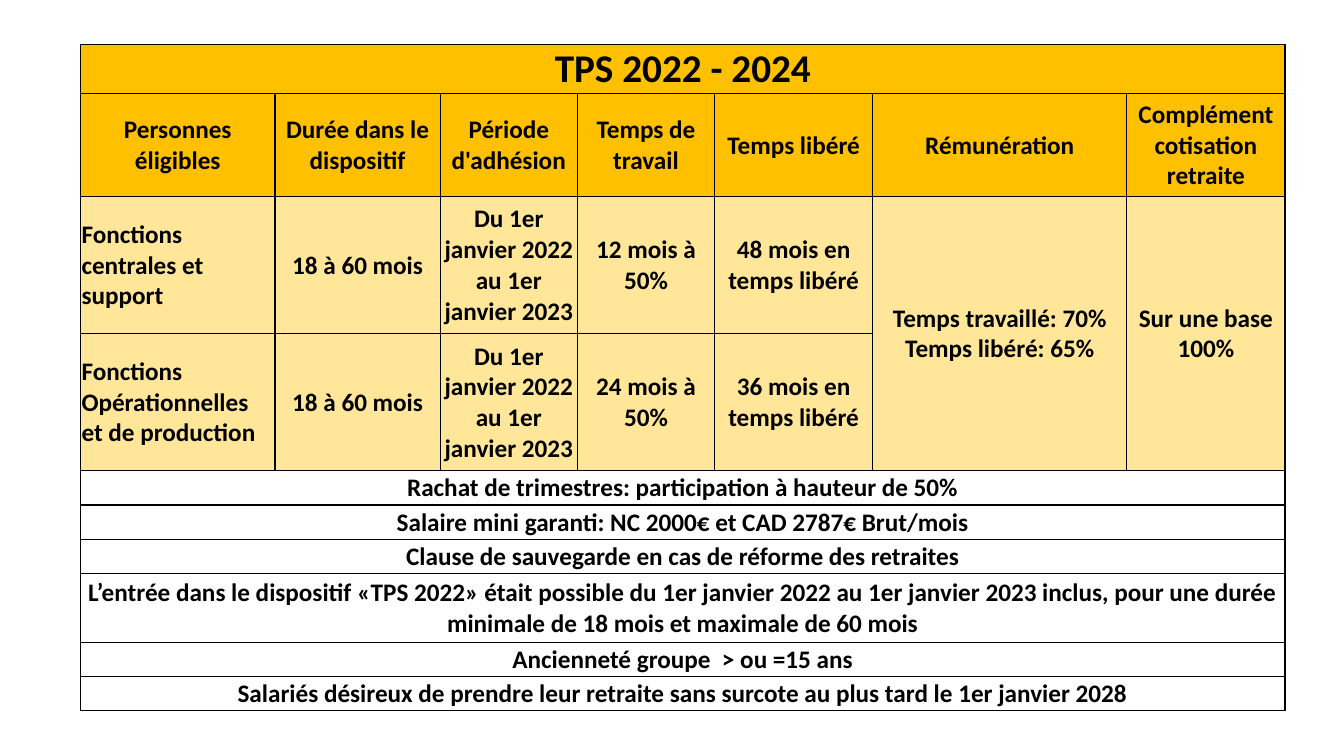
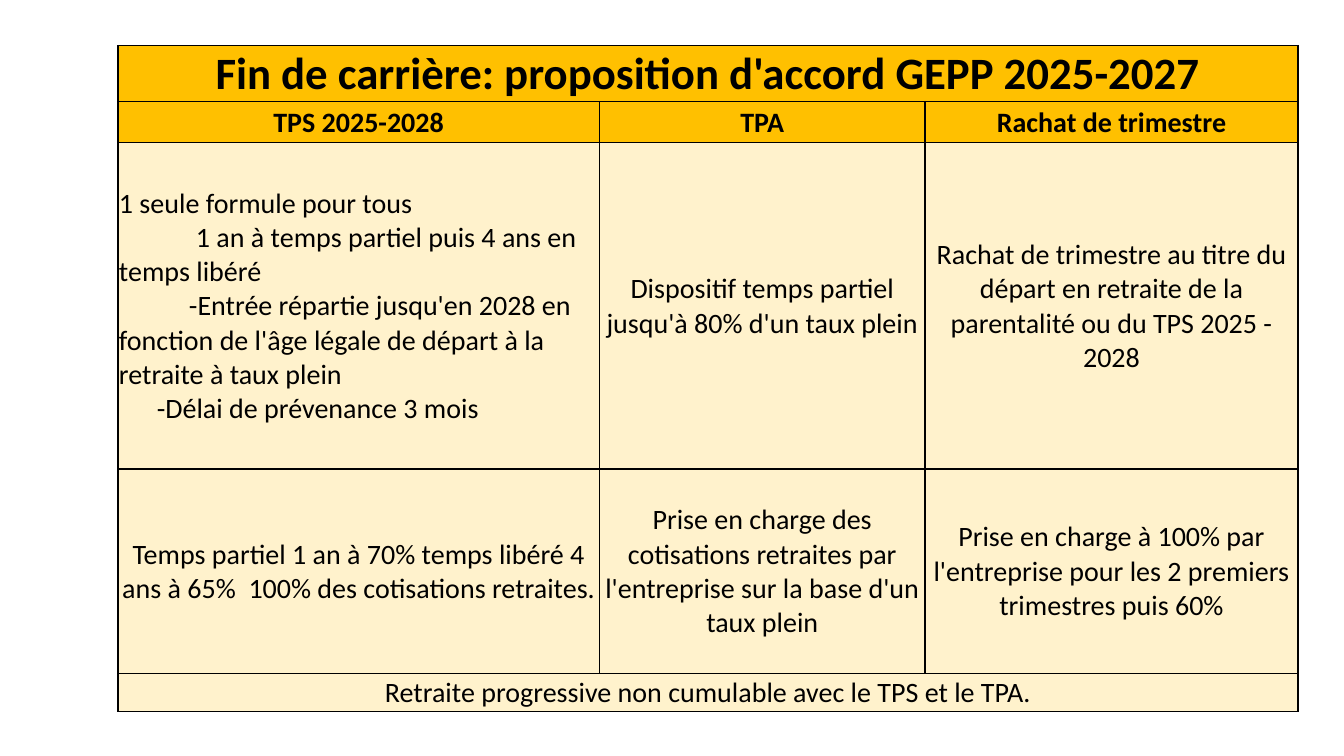
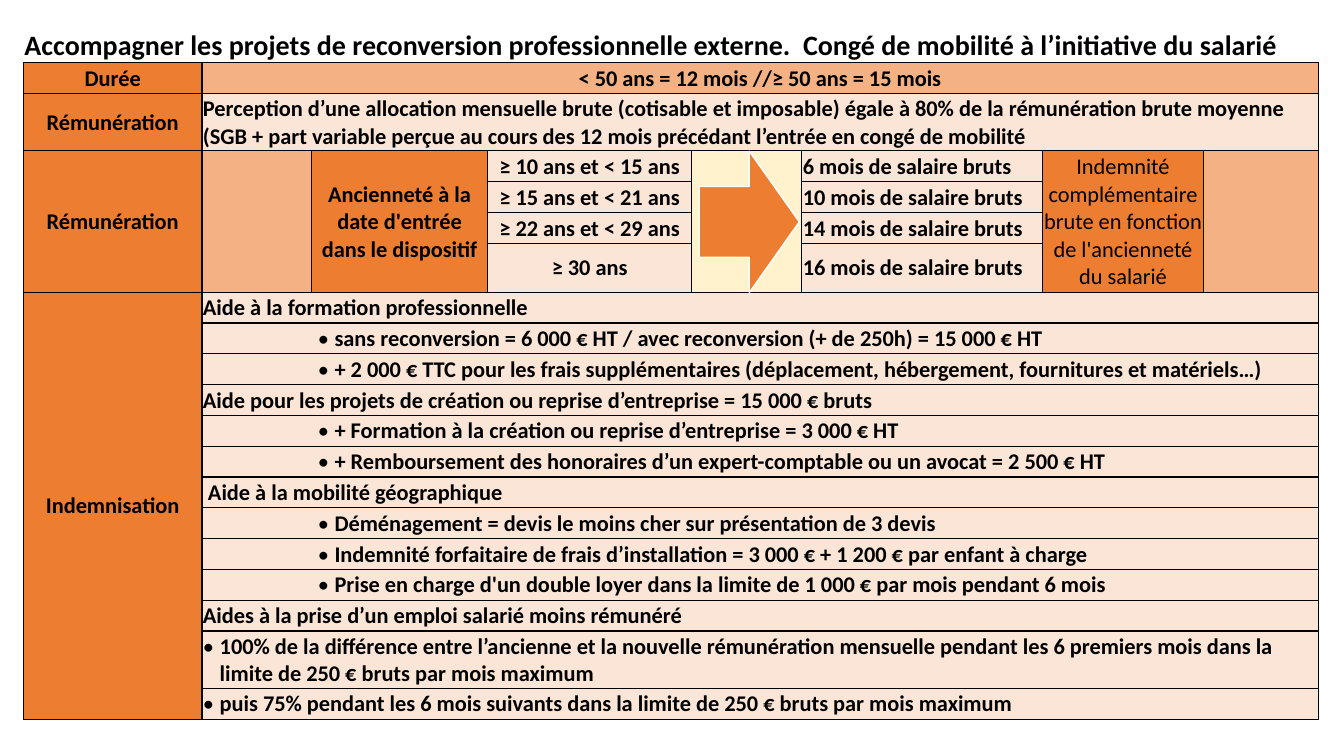
from lxml import etree
from pptx import Presentation
from pptx.dml.color import RGBColor
from pptx.enum.shapes import MSO_SHAPE
from pptx.enum.text import MSO_ANCHOR, PP_ALIGN
from pptx.oxml.ns import qn
from pptx.util import Pt

LEFT, CENTER = PP_ALIGN.LEFT, PP_ALIGN.CENTER
MIDDLE = MSO_ANCHOR.MIDDLE
RIGHT_ARROW = MSO_SHAPE.RIGHT_ARROW
FONT = "Calibri"
COLORS = {
    "black": "000000", "white": "FFFFFF",
    "gold": "FFC000", "light gold": "FFE699", "cream": "FFF2CC",
    "orange": "ED7D31", "light orange": "F4B183", "peach": "FBE5D6",
}
CELL_FORMAT = {
    "margin_left": Pt(0.75), "margin_right": Pt(0.75), "margin_top": Pt(0.75),
    "margin_bottom": Pt(0), "vertical_anchor": MIDDLE,
}


def add_grid(slide, left, top, widths, heights):
    """Add an unstyled table whose cells all have thin black borders."""
    frame = slide.shapes.add_table(len(heights), len(widths), Pt(left), Pt(top),
                                   Pt(sum(widths)), Pt(sum(heights)))
    table = frame.table
    table.first_row = table.horz_banding = False
    for column, width in zip(table.columns, widths):
        column.width = Pt(width)
    for row, height in zip(table.rows, heights):
        row.height = Pt(height)
    for cell in table.iter_cells():
        for name, value in CELL_FORMAT.items():
            setattr(cell, name, value)
        properties = cell._tc.get_or_add_tcPr()
        for side in ("a:lnL", "a:lnR", "a:lnT", "a:lnB"):
            line = etree.SubElement(properties, qn(side), w=str(Pt(1)))
            fill = etree.SubElement(line, qn("a:solidFill"))
            etree.SubElement(fill, qn("a:srgbClr"), val=COLORS["black"])
    return table


def write_cell(table, row, column, text, fill, size, bold=True, align=CENTER,
               rows=1, columns=1):
    """Fill a cell, merged over the given rows and columns; return its paragraphs."""
    cell = table.cell(row, column)
    if rows > 1 or columns > 1:
        cell.merge(table.cell(row + rows - 1, column + columns - 1))
    cell.fill.solid()
    cell.fill.fore_color.rgb = RGBColor.from_string(COLORS[fill])
    cell.text_frame.text = text
    font_format = {"name": FONT, "size": Pt(size), "bold": bold}
    for paragraph in cell.text_frame.paragraphs:
        paragraph.alignment = align
        for run in paragraph.runs:
            for name, value in font_format.items():
                setattr(run.font, name, value)
            run.font.color.rgb = RGBColor.from_string(COLORS["black"])
    return cell.text_frame.paragraphs


presentation = Presentation()
presentation.slide_width, presentation.slide_height = Pt(960), Pt(540)
blank_layout = presentation.slide_layouts[6]

# Slide 1: current scheme
slide = presentation.slides.add_slide(blank_layout)
table = add_grid(slide, 57.5, 31.75, [139, 118, 98, 98, 113, 181.5, 113],
                 [33, 73.5, 98, 98, 24.5, 24.5, 24.5, 49, 24.5, 24.5])
write_cell(table, 0, 0, "TPS 2022 - 2024", "gold", 28, columns=7)
headings = ["Personnes éligibles", "Durée dans le dispositif", "Période d'adhésion",
            "Temps de travail", "Temps libéré", "Rémunération",
            "Complément cotisation retraite"]
for column, heading in enumerate(headings):
    write_cell(table, 1, column, heading, "gold", 18)

period = "Du 1er janvier 2022 au 1er janvier 2023"
staff_groups = [
    ["Fonctions centrales et support", "18 à 60 mois", period,
     "12 mois à 50%", "48 mois en temps libéré"],
    ["Fonctions Opérationnelles et de production", "18 à 60 mois", period,
     "24 mois à 50%", "36 mois en temps libéré"],
]
for row, group in enumerate(staff_groups, start=2):
    for column, text in enumerate(group):
        write_cell(table, row, column, text, "light gold", 18,
                   align=CENTER if column else LEFT)
write_cell(table, 2, 5, "Temps travaillé: 70%\nTemps libéré: 65%", "light gold", 18, rows=2)
write_cell(table, 2, 6, "Sur une base 100%", "light gold", 18, rows=2)

conditions = [
    "Rachat de trimestres: participation à hauteur de 50%",
    "Salaire mini garanti: NC 2000€ et CAD 2787€ Brut/mois",
    "Clause de sauvegarde en cas de réforme des retraites",
    "L’entrée dans le dispositif «TPS 2022» était possible du 1er janvier 2022 au "
    "1er janvier 2023 inclus, pour une durée minimale de 18 mois et maximale de 60 mois",
    "Ancienneté groupe  > ou =15 ans",
    "Salariés désireux de prendre leur retraite sans surcote au plus tard le 1er janvier 2028",
]
for row, condition in enumerate(conditions, start=4):
    write_cell(table, row, 0, condition, "white", 18, columns=7)

# Slide 2: proposed agreement
slide = presentation.slides.add_slide(blank_layout)
table = add_grid(slide, 84.25, 32.5, [344, 232.5, 266.5], [40, 29.5, 233, 146, 27.5])
write_cell(table, 0, 0, "Fin de carrière: proposition d'accord GEPP 2025-2027",
           "gold", 32, columns=3)
for column, heading in enumerate(["TPS 2025-2028", "TPA", "Rachat de trimestre"]):
    write_cell(table, 1, column, heading, "gold", 20)

formula_lines = [
    ("1 seule formule pour tous", 0),
    ("1 an à temps partiel puis 4 ans en temps libéré", 55),
    ("-Entrée répartie jusqu'en 2028 en fonction de l'âge légale de départ à la "
     "retraite à taux plein", 50),
    ("-Délai de prévenance 3 mois", 27),
]
paragraphs = write_cell(table, 2, 0, "\n".join(text for text, indent in formula_lines),
                        "cream", 20, bold=False, align=LEFT)
for paragraph, (text, indent) in zip(paragraphs, formula_lines):
    paragraph._p.get_or_add_pPr().set("indent", str(Pt(indent)))

measures = [
    (2, 1, "Dispositif temps partiel jusqu'à 80% d'un taux plein"),
    (2, 2, "Rachat de trimestre au titre du départ en retraite de la parentalité "
           "ou du TPS 2025 - 2028"),
    (3, 0, "Temps partiel 1 an à 70% temps libéré 4 ans à 65%  100% des cotisations "
           "retraites."),
    (3, 1, "Prise en charge des cotisations retraites par l'entreprise sur la base "
           "d'un taux plein"),
    (3, 2, "Prise en charge à 100% par l'entreprise pour les 2 premiers trimestres "
           "puis 60%"),
]
for row, column, text in measures:
    write_cell(table, row, column, text, "cream", 20, bold=False)
write_cell(table, 4, 0, "Retraite progressive non cumulable avec le TPS et le TPA.",
           "cream", 20, bold=False, columns=3)

# Slide 3: mobility leave
slide = presentation.slides.add_slide(blank_layout)
table = add_grid(slide, 16.75, 19.5, [127.5, 78.5, 125.5, 146, 78.5, 172, 115, 82],
                 [25, 22, 41, 22, 22, 22, 35] + [22] * 11 + [41, 22])
write_cell(table, 0, 0, "Accompagner les projets de reconversion professionnelle externe.  "
           "Congé de mobilité à l’initiative du salarié", "white", 20, align=LEFT, columns=8)
for column in range(8):
    properties = table.cell(0, column)._tc.tcPr
    for side in ("a:lnL", "a:lnR", "a:lnT"):
        properties.find(qn(side)).find(".//" + qn("a:srgbClr")).set("val", COLORS["white"])

for row, label, rows in [(1, "Durée", 1), (2, "Rémunération", 1),
                         (3, "Rémunération", 4), (7, "Indemnisation", 13)]:
    write_cell(table, row, 0, label, "orange", 16, rows=rows)
write_cell(table, 1, 1, "< 50 ans = 12 mois //≥ 50 ans = 15 mois", "light orange", 16,
           columns=7)
write_cell(table, 2, 1, "Perception d’une allocation mensuelle brute (cotisable et imposable) "
           "égale à 80% de la rémunération brute moyenne (SGB + part variable perçue au cours "
           "des 12 mois précédant l’entrée en congé de mobilité", "peach", 16,
           align=LEFT, columns=7)

for column, fill in [(1, "light orange"), (4, "cream"), (7, "light orange")]:
    write_cell(table, 3, column, "", fill, 16, rows=4)
write_cell(table, 3, 2, "Ancienneté à la date d'entrée dans le dispositif", "orange", 16, rows=4)
write_cell(table, 3, 6, "Indemnité complémentaire brute en fonction de l'ancienneté du salarié",
           "orange", 16, bold=False, rows=4)
seniority_bonuses = [("≥ 10 ans et < 15 ans", 6), ("≥ 15 ans et < 21 ans", 10),
                     ("≥ 22 ans et < 29 ans", 14), ("≥ 30 ans", 16)]
for row, (seniority, months) in enumerate(seniority_bonuses, start=3):
    write_cell(table, row, 3, seniority, "peach", 16)
    write_cell(table, row, 5, f"{months} mois de salaire bruts", "peach", 16, align=LEFT)

# Text and bullet position; None means no bullet
allowances = [
    ("Aide à la formation professionnelle", None),
    ("sans reconversion = 6 000 € HT / avec reconversion (+ de 250h) = 15 000 € HT", 82),
    ("+ 2 000 € TTC pour les frais supplémentaires (déplacement, hébergement, "
     "fournitures et matériels…)", 82),
    ("Aide pour les projets de création ou reprise d’entreprise = 15 000 € bruts", None),
    ("+ Formation à la création ou reprise d’entreprise = 3 000 € HT", 82),
    ("+ Remboursement des honoraires d’un expert-comptable ou un avocat = 2 500 € HT", 82),
    (" Aide à la mobilité géographique", None),
    ("Déménagement = devis le moins cher sur présentation de 3 devis", 82),
    ("Indemnité forfaitaire de frais d’installation = 3 000 € + 1 200 € par enfant à charge", 82),
    ("Prise en charge d'un double loyer dans la limite de 1 000 € par mois pendant 6 mois", 82),
    ("Aides à la prise d’un emploi salarié moins rémunéré", None),
    ("100% de la différence entre l’ancienne et la nouvelle rémunération mensuelle pendant "
     "les 6 premiers mois dans la limite de 250 € bruts par mois maximum", 0),
    ("puis 75% pendant les 6 mois suivants dans la limite de 250 € bruts par mois maximum", 0),
]
bullet_gap = 12
for row, (text, bullet_left) in enumerate(allowances, start=7):
    paragraph = write_cell(table, row, 1, text, "peach", 16, align=LEFT, columns=7)[0]
    if bullet_left is not None:
        properties = paragraph._p.get_or_add_pPr()
        properties.set("marL", str(Pt(bullet_left + bullet_gap)))
        properties.set("indent", str(Pt(-bullet_gap)))
        etree.SubElement(properties, qn("a:buFont"), typeface=FONT)
        etree.SubElement(properties, qn("a:buChar"), char="•")

arrow = slide.shapes.add_shape(RIGHT_ARROW, Pt(499.5), Pt(108), Pt(71.5), Pt(101))
arrow.shadow.inherit = False
arrow.fill.solid()
arrow.fill.fore_color.rgb = RGBColor.from_string(COLORS["orange"])
arrow.line.color.rgb = RGBColor.from_string(COLORS["white"])
arrow.line.width = Pt(1)

presentation.save("out.pptx")
